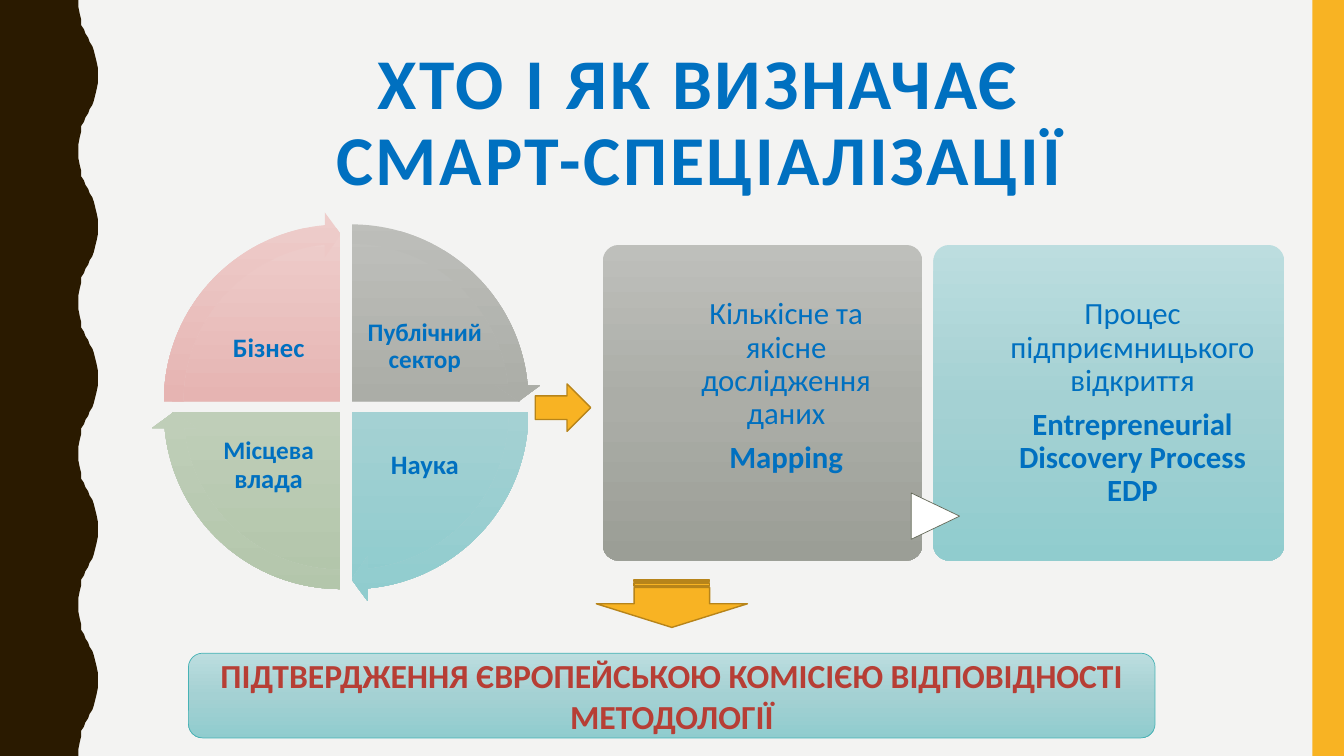
from copy import deepcopy
from dataclasses import dataclass

from pptx import Presentation
from pptx.dml.color import RGBColor
from pptx.enum.shapes import MSO_SHAPE
from pptx.enum.text import MSO_ANCHOR, MSO_AUTO_SIZE, PP_ALIGN
from pptx.oxml.ns import qn
from pptx.shapes.autoshape import Shape
from pptx.slide import Slide
from pptx.text.text import TextFrame, _Paragraph
from pptx.util import Pt

BACKGROUND = RGBColor(0xF3, 0xF3, 0xF2)
BROWN = RGBColor(0x2A, 0x1A, 0x00)
AMBER = RGBColor(0xF8, 0xB3, 0x23)
AMBER_EDGE = RGBColor(0xB7, 0x84, 0x1A)
BLUE = RGBColor(0x00, 0x70, 0xC0)
RED = RGBColor(0xB7, 0x3E, 0x35)
WHITE = RGBColor(0xFF, 0xFF, 0xFF)
OLIVE_EDGE = RGBColor(0x65, 0x6A, 0x59)
TEAL_EDGE = RGBColor(0x46, 0xB2, 0xB5)

Gradient = tuple[RGBColor, RGBColor, RGBColor]
Box = tuple[float, float, float, float]
GREY: Gradient = (RGBColor(0xBE, 0xBF, 0xBB), RGBColor(0xAB, 0xAD, 0xA7), RGBColor(0x9B, 0x9E, 0x96))
TEAL: Gradient = (RGBColor(0xBC, 0xDD, 0xDF), RGBColor(0xA4, 0xD1, 0xD3), RGBColor(0x90, 0xCC, 0xCE))
GREEN: Gradient = (RGBColor(0xD1, 0xDC, 0xCD), RGBColor(0xBF, 0xCE, 0xB8), RGBColor(0xB3, 0xC6, 0xAB))
PINK: Gradient = (RGBColor(0xEE, 0xCD, 0xCB), RGBColor(0xE6, 0xB4, 0xB2), RGBColor(0xE4, 0xA4, 0xA1))

FONT = "Calibri"
SLIDE_WIDTH, SLIDE_HEIGHT = 960, 540
QUARTER_TURN = 54  # 90 degrees in adjustment units
ARROW_HEAD_TURN = 3.275
PIE_SIZE, CYCLE_ARROW_SIZE = 240.5, 270.7
HALF_WAVE = [
    (56.2, 0), (56.5, 5), (57, 10), (57.6, 14.5), (58.5, 18), (59.8, 21), (61.2, 24), (62.6, 27),
    (64.1, 30), (65.5, 33), (67, 36), (68.4, 39.5), (69.2, 44), (69.7, 49), (69.9, 54),
]
WAVE_LENGTH = 108


@dataclass
class Participant:
    runs: list[tuple[str, float]]
    gradient: Gradient
    start: float
    center: tuple[float, float]
    label: tuple[float, float]
    pie_height: float = PIE_SIZE


@dataclass
class Step:
    name: str
    term: str
    gradient: Gradient
    left: float
    width: float
    text_left: float
    text_width: float


LEFT, RIGHT, TOP, BOTTOM = 243.4, 251.2, 286.6, 294.5
PARTICIPANTS = [
    Participant([("Публічний сектор", 18)], GREY, 162, (RIGHT, TOP), (259.2, 214.6), 244.8),
    Participant([("Наука", 19)], TEAL, 0, (RIGHT, BOTTOM), (259.2, 299.5)),
    Participant([("Місцева", 18), (" влада", 19)], GREEN, 54, (LEFT, BOTTOM), (147.6, 299.5)),
    Participant([("Бізнес", 19)], PINK, 108, (LEFT, TOP), (147.6, 216)),
]
STEPS = [
    Step("Кількісне та якісне дослідження даних", "Mapping", GREY, 430.6, 228.2, 476.6, 169.9),
    Step("Процес підприємницького відкриття", "Entrepreneurial Discovery Process EDP",
         TEAL, 666.7, 250.6, 715.7, 186.5),
]


def add_filled(slide: Slide, kind: MSO_SHAPE, box: Box, fill: RGBColor | Gradient,
               edge: RGBColor | None = None, edge_width: float = 1,
               adjustments: tuple[float, ...] = ()) -> Shape:
    shape = slide.shapes.add_shape(kind, *map(Pt, box))
    for index, value in enumerate(adjustments):
        shape.adjustments[index] = value
    paint(shape, fill, edge, edge_width)
    return shape


def paint(shape: Shape, fill: RGBColor | Gradient, edge: RGBColor | None = None,
          edge_width: float = 1) -> None:
    shape.shadow.inherit = False
    if isinstance(fill, RGBColor):
        shape.fill.solid()
        shape.fill.fore_color.rgb = fill
    else:
        shape.fill.gradient()
        shape.fill.gradient_angle = 270
        stops = shape._element.spPr.find(qn("a:gradFill")).find(qn("a:gsLst"))
        middle = deepcopy(stops[0])
        middle.set("pos", "50000")
        stops.insert(1, middle)
        for stop, color in zip(shape.fill.gradient_stops, fill):
            stop.color.rgb = color
    if edge is None:
        shape.line.fill.background()
    else:
        shape.line.color.rgb = edge
        shape.line.width = Pt(edge_width)


def add_run(paragraph: _Paragraph, text: str, size: float, color: RGBColor = BLUE,
            bold: bool = True) -> None:
    run = paragraph.add_run()
    run.text = text
    run.font.name = FONT
    run.font.size = Pt(size)
    run.font.bold = bold
    run.font.color.rgb = color


def add_text_frame(slide: Slide, box: Box, side_inset: float, top_inset: float,
                   anchor: MSO_ANCHOR) -> TextFrame:
    frame = slide.shapes.add_textbox(*map(Pt, box)).text_frame
    frame.word_wrap = True
    frame.vertical_anchor = anchor
    frame.margin_left = frame.margin_right = frame.margin_bottom = Pt(side_inset)
    frame.margin_top = Pt(top_inset)
    return frame


def center(paragraph: _Paragraph, space_after: float = 0) -> None:
    paragraph.alignment = PP_ALIGN.CENTER
    paragraph.line_spacing = 0.9
    paragraph.space_after = Pt(space_after)


def add_wavy_edge(slide: Slide) -> None:
    wave = HALF_WAVE + [(x, WAVE_LENGTH - y) for x, y in reversed(HALF_WAVE[:-1])]
    outline = [(x, y + turn * WAVE_LENGTH)
               for turn in range(SLIDE_HEIGHT // WAVE_LENGTH) for x, y in wave]
    builder = slide.shapes.build_freeform(0, 0, scale=Pt(1))
    builder.add_line_segments(outline + [(0, SLIDE_HEIGHT)], close=True)
    paint(builder.convert_to_shape(), BROWN)


def add_title(slide: Slide) -> None:
    title = slide.shapes.title
    title.left, title.top, title.width, title.height = map(Pt, (98.6, 30.2, 801.4, 117.4))
    frame = title.text_frame
    frame.word_wrap = True
    frame.auto_size = MSO_AUTO_SIZE.NONE
    frame.vertical_anchor = MSO_ANCHOR.MIDDLE
    heading = frame.paragraphs[0]
    center(heading)
    add_run(heading, "ХТО І ЯК ВИЗНАЧАЄ", 51)
    heading.add_line_break()
    add_run(heading, "СМАРТ-СПЕЦІАЛІЗАЦІЇ", 50)
    for run in heading.runs:
        run._r.get_or_add_rPr().set("spc", "200")


def add_cycle(slide: Slide) -> None:
    for part in PARTICIPANTS:
        x, y = part.center
        end = (part.start + QUARTER_TURN) % (4 * QUARTER_TURN)
        add_filled(slide, MSO_SHAPE.PIE,
                   (x - PIE_SIZE / 2, y - part.pie_height / 2, PIE_SIZE, part.pie_height),
                   part.gradient, adjustments=(part.start, end))
        frame = add_text_frame(slide, (*part.label, 88.6, 66.2), 2.2, 2.2, MSO_ANCHOR.MIDDLE)
        center(frame.paragraphs[0])
        for text, size in part.runs:
            add_run(frame.paragraphs[0], text, size)
    for part in PARTICIPANTS:
        x, y = part.center
        head = part.start + QUARTER_TURN - ARROW_HEAD_TURN
        add_filled(slide, MSO_SHAPE.CIRCULAR_ARROW,
                   (x - CYCLE_ARROW_SIZE / 2, y - CYCLE_ARROW_SIZE / 2, CYCLE_ARROW_SIZE, CYCLE_ARROW_SIZE),
                   part.gradient, adjustments=(0.051, ARROW_HEAD_TURN, head, part.start, 0.059))


def add_steps(slide: Slide) -> None:
    top, height = 175, 225.4
    for step in STEPS:
        add_filled(slide, MSO_SHAPE.ROUNDED_RECTANGLE, (step.left, top, step.width, height),
                   step.gradient, adjustments=(0.05,))
        frame = add_text_frame(slide, (step.text_left, top, step.text_width, height), 0, 38, MSO_ANCHOR.TOP)
        name, term = frame.paragraphs[0], frame.add_paragraph()
        center(name, 7.7)
        add_run(name, step.name, 22, bold=False)
        center(term)
        add_run(term, step.term, 22)
    pointer = add_filled(slide, MSO_SHAPE.FLOWCHART_EXTRACT, (651.6, 351.4, 33.1, 34.6),
                         WHITE, OLIVE_EDGE, 0.5)
    pointer.rotation = 90


def add_conclusion(slide: Slide) -> None:
    add_filled(slide, MSO_SHAPE.RIGHT_ARROW, (382.3, 274.3, 39.6, 33.8), AMBER, AMBER_EDGE)
    down = add_filled(slide, MSO_SHAPE.STRIPED_RIGHT_ARROW, (463, 377.3, 33.8, 108), AMBER, AMBER_EDGE)
    down.rotation = 90
    banner = add_filled(slide, MSO_SHAPE.ROUNDED_RECTANGLE, (134.6, 466.6, 690.5, 60.5),
                        TEAL, TEAL_EDGE, 0.5)
    frame = banner.text_frame
    frame.word_wrap = True
    frame.vertical_anchor = MSO_ANCHOR.MIDDLE
    frame.paragraphs[0].alignment = PP_ALIGN.CENTER
    add_run(frame.paragraphs[0], "ПІДТВЕРДЖЕННЯ ЄВРОПЕЙСЬКОЮ КОМІСІЄЮ ВІДПОВІДНОСТІ МЕТОДОЛОГІЇ", 24, RED)


def main() -> None:
    deck = Presentation()
    deck.slide_width, deck.slide_height = Pt(SLIDE_WIDTH), Pt(SLIDE_HEIGHT)
    slide = deck.slides.add_slide(deck.slide_layouts[5])
    slide.background.fill.solid()
    slide.background.fill.fore_color.rgb = BACKGROUND
    add_wavy_edge(slide)
    add_filled(slide, MSO_SHAPE.RECTANGLE, (937.5, 0, 22.5, SLIDE_HEIGHT), AMBER)
    add_title(slide)
    add_cycle(slide)
    add_steps(slide)
    add_conclusion(slide)
    deck.save("out.pptx")


if __name__ == "__main__":
    main()
